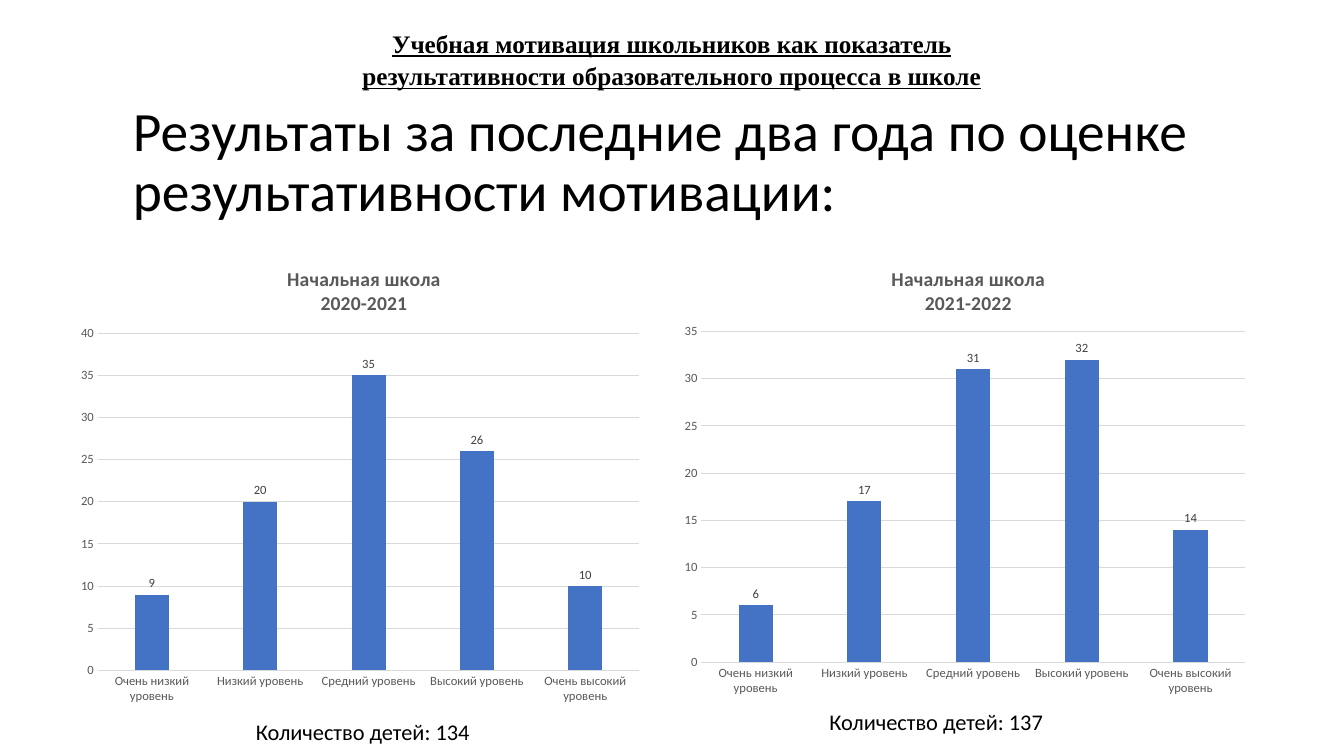
"""Build the slide on pupils' motivation results over two years."""
import pptx
import pptx.chart.data
import pptx.dml.color
import pptx.enum.chart
import pptx.enum.text
import pptx.oxml
import pptx.oxml.ns
import pptx.util

Cm = pptx.util.Cm
Pt = pptx.util.Pt
HUES = {"ink": "000000", "bar": "4472C4", "grid": "D9D9D9",
        "axis": "595959", "label": "404040"}
LEVELS = ["Очень низкий уровень", "Низкий уровень", "Средний уровень",
          "Высокий уровень", "Очень высокий уровень"]


def hue(name):
    return pptx.dml.color.RGBColor.from_string(HUES[name])


def style(font, size, color, face="Calibri"):
    font.name = face
    font.size = Pt(size)
    font.color.rgb = hue(color)


def add_text(slide, box, text, size, face="Calibri"):
    frame = slide.shapes.add_textbox(*map(Cm, box)).text_frame
    frame.word_wrap = True
    frame.text = text
    para = frame.paragraphs[0]
    style(para.font, size, "ink", face)
    return frame, para


def set_place(owner, **parts):
    """Give a chart title or plot area a fixed place."""
    qn = pptx.oxml.ns.qn
    for old in owner.findall(qn("c:layout")):
        owner.remove(old)
    inner = '<c:layoutTarget val="inner"/>' if "w" in parts else ""
    modes = "".join(f'<c:{key}Mode val="edge"/>' for key in "xy")
    sizes = "".join(f'<c:{key} val="{val}"/>' for key, val in parts.items())
    layout = pptx.oxml.parse_xml(
        f'<c:layout {pptx.oxml.ns.nsdecls("c")}><c:manualLayout>'
        f'{inner}{modes}{sizes}</c:manualLayout></c:layout>')
    text = owner.find(qn("c:tx"))
    owner.insert(0 if text is None else 1, layout)


def style_axes(chart, top):
    for axis in (chart.category_axis, chart.value_axis):
        axis.major_tick_mark = pptx.enum.chart.XL_TICK_MARK.NONE
        axis.minor_tick_mark = pptx.enum.chart.XL_TICK_MARK.NONE
        style(axis.tick_labels.font, 9, "axis")
    value = chart.value_axis
    value.minimum_scale, value.maximum_scale, value.major_unit = 0, top, 5
    value.format.line.fill.background()
    for line in (chart.category_axis.format.line,
                 value.major_gridlines.format.line):
        line.color.rgb = hue("grid")
        line.width = Pt(0.75)


def add_chart(slide, box, years, values, top):
    data = pptx.chart.data.CategoryChartData(number_format="0")
    data.categories = LEVELS
    data.add_series("Series 1", values)
    kind = pptx.enum.chart.XL_CHART_TYPE.COLUMN_CLUSTERED
    chart = slide.shapes.add_chart(kind, *map(Cm, box), data).chart
    style(chart.font, 10, "ink")
    chart.has_legend = False
    title = chart.chart_title
    title.text_frame.text = f"Начальная школа\n{years}"
    for para in title.text_frame.paragraphs:
        style(para.font, 14, "axis")
    title.include_in_layout = False
    style_axes(chart, top)
    plot = chart.plots[0]
    plot.gap_width, plot.overlap = 219, -27
    plot.vary_by_categories = False
    fill = plot.series[0].format.fill
    fill.solid()
    fill.fore_color.rgb = hue("bar")
    plot.has_data_labels = True
    labels = plot.data_labels
    labels.show_value = True
    labels.position = pptx.enum.chart.XL_LABEL_POSITION.OUTSIDE_END
    style(labels.font, 9, "label")
    root = chart.element.chart
    set_place(root.plotArea, x=0.05, y=0.19, w=0.93, h=0.72)
    set_place(title.element, x=0.37, y=0.04)


def main():
    deck = pptx.Presentation()
    deck.slide_width, deck.slide_height = Cm(33.87), Cm(19.05)
    slide = deck.slides.add_slide(deck.slide_layouts[6])

    frame, para = add_text(
        slide, (3.1, 3.61, 28.55, 2.54),
        "Результаты за последние два года по оценке "
        "результативности мотивации:", 39.6)
    frame.vertical_anchor = pptx.enum.text.MSO_ANCHOR.BOTTOM
    frame.margin_bottom = Cm(0.51)
    para.line_spacing = 0.9

    frame, para = add_text(
        slide, (8.46, 0.53, 16.94, 1.93),
        "Учебная мотивация школьников как показатель "
        "результативности образовательного процесса в школе",
        18, "Times New Roman")
    para.alignment = pptx.enum.text.PP_ALIGN.CENTER
    para.line_spacing = 1.07
    para.space_after = Pt(8)
    para.font.bold = para.font.underline = True

    add_chart(slide, (1.73, 6.15, 14.68, 11.81), "2020-2021",
              (9, 20, 35, 26, 10), 40)
    add_chart(slide, (16.94, 6.15, 14.73, 11.58), "2021-2022",
              (6, 17, 31, 32, 14), 35)
    add_text(slide, (6.2, 17.96, 6.2, 0.94), "Количество детей: 134", 16)
    add_text(slide, (20.65, 17.73, 7.01, 0.94), "Количество детей: 137", 16)
    deck.save("out.pptx")


if __name__ == "__main__":
    main()
